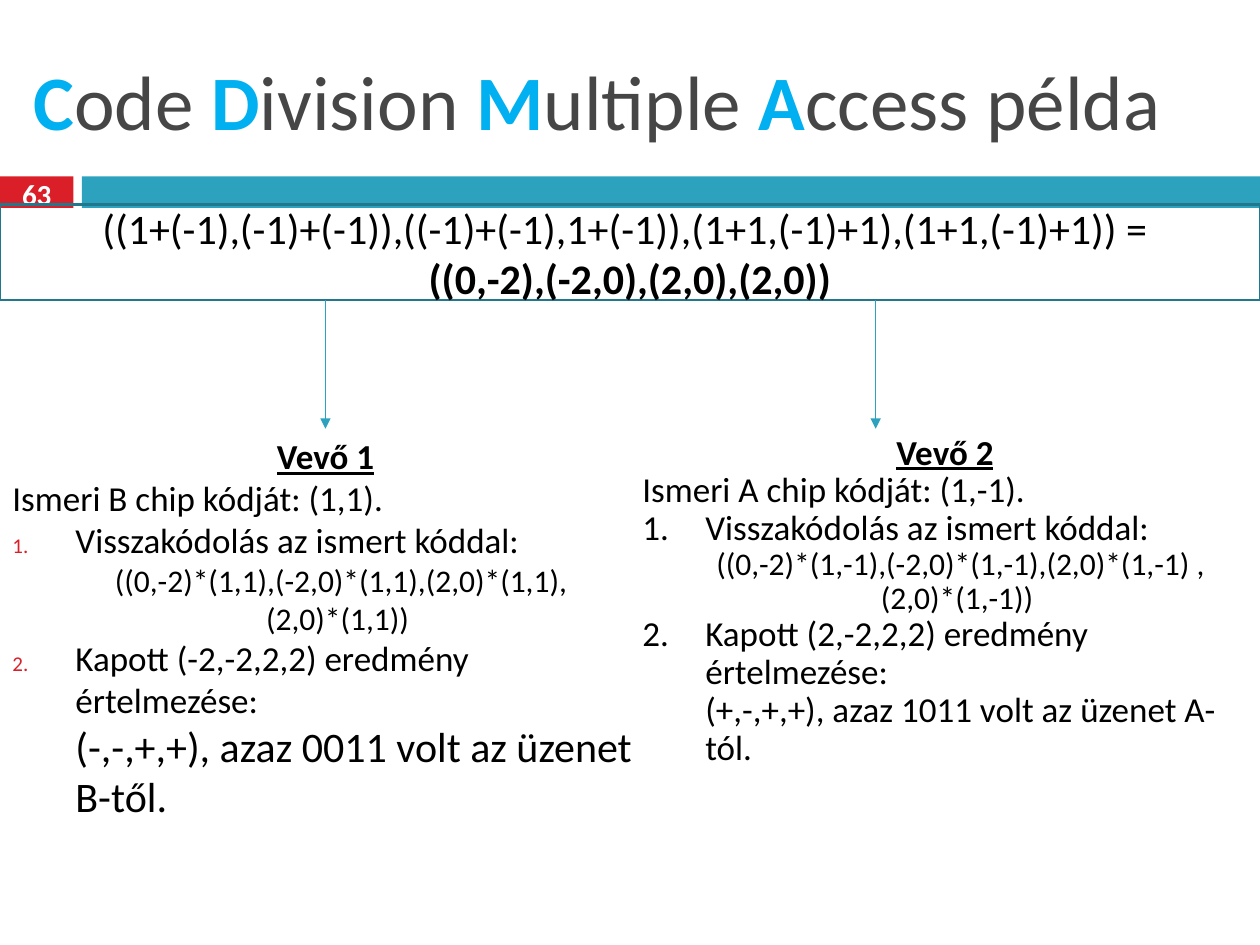
from pptx import Presentation
from pptx.dml.color import RGBColor
from pptx.enum import shapes, text
from pptx.oxml import ns, xmlchemy
from pptx.util import Pt

FONT = "Calibri"
RED = RGBColor(0xDA, 0x1F, 0x28)
TEAL = RGBColor(0x2D, 0xA2, 0xBF)
DEEP = RGBColor(0x21, 0x78, 0x8D)
SKY = RGBColor(0x00, 0xB0, 0xF0)
GRAY = RGBColor(0x46, 0x46, 0x46)
BLACK = RGBColor(0, 0, 0)
WHITE = RGBColor(0xFF, 0xFF, 0xFF)
LEFT, MID = text.PP_ALIGN.LEFT, text.PP_ALIGN.CENTER


def sub(node, tag, **attrs):
    child = xmlchemy.OxmlElement(tag)
    for key, val in attrs.items():
        child.set(key, str(val))
    node.append(child)
    return child


def style(font, size, color, bold=False):
    font.name, font.size, font.bold = FONT, Pt(size), bold
    font.color.rgb = color


def add_rect(slide, box, fill=None, line=None):
    rect = slide.shapes.add_shape(shapes.MSO_SHAPE.RECTANGLE, *map(Pt, box))
    rect.shadow.inherit = False
    if fill is None:
        rect.fill.background()
    else:
        rect.fill.solid()
        rect.fill.fore_color.rgb = fill
    if line is None:
        rect.line.fill.background()
    else:
        rect.line.color.rgb = line
        rect.line.width = Pt(1.5)
    return rect


def add_title(slide, box):
    title = slide.shapes.title
    title.left, title.top, title.width, title.height = map(Pt, box)
    frame = title.text_frame
    frame.vertical_anchor = text.MSO_ANCHOR.MIDDLE
    frame.auto_size = text.MSO_AUTO_SIZE.NONE
    para = frame.paragraphs[0]
    para.alignment = LEFT
    for word in ("Code ", "Division ", "Multiple ", "Access példa"):
        for part, color, bold in ((word[0], SKY, True), (word[1:], GRAY, False)):
            run = para.add_run()
            run.text = part
            style(run.font, 44, color, bold)


def add_bar(slide, box, number):
    left, top, width, height = box
    tab, gap = 42, 4.8
    add_rect(slide, (left, top, tab, height), RED)
    add_rect(slide, (left + tab + gap, top, width - tab - gap, height), TEAL)
    label = slide.shapes.add_textbox(*map(Pt, (left, top - 2.2, tab, 24)))
    frame = label.text_frame
    frame.vertical_anchor = text.MSO_ANCHOR.MIDDLE
    para = frame.paragraphs[0]
    para.text, para.alignment = number, MID
    style(para.font, 16.6, WHITE, True)


def add_sum(slide, box, terms, total):
    frame = add_rect(slide, box, line=DEEP).text_frame
    frame.word_wrap = True
    frame.vertical_anchor = text.MSO_ANCHOR.MIDDLE
    para = frame.paragraphs[0]
    para.alignment = MID
    for part, bold in ((terms, False), (total, True)):
        if bold:
            para.add_line_break()
        run = para.add_run()
        run.text = part
        style(run.font, 24, BLACK, bold)


def add_arrow(slide, x, top, end):
    kind = shapes.MSO_CONNECTOR.STRAIGHT
    arrow = slide.shapes.add_connector(kind, *map(Pt, (x, top, x, end)))
    arrow.line.color.rgb = TEAL
    arrow.line.width = Pt(0.79)
    sub(arrow.line._get_or_add_ln(), "a:tailEnd", type="triangle")
    sub(arrow._element.spPr, "a:effectLst")


def add_steps(slide, box, lines, last=20, space=1.0, mark=None):
    frame = slide.shapes.add_textbox(*map(Pt, box)).text_frame
    frame.word_wrap = True
    forms = (
        (MID, 0, 0, 20, False),
        (LEFT, 0, 0, 20, False),
        (LEFT, 0, 36, 20, True),
        (MID, 1, 18, 18, False),
        (LEFT, 0, 36, 20, True),
        (LEFT, 1, 36, last, False),
    )
    for i, (line, form) in enumerate(zip(lines, forms)):
        align, level, margin, size, listed = form
        para = frame.add_paragraph() if i else frame.paragraphs[0]
        para.text, para.alignment, para.level = line, align, level
        para.line_spacing = space
        style(para.font, size, BLACK, i == 0)
        para.font.underline = i == 0
        props = para._p.get_or_add_pPr()
        props.set("marL", str(Pt(margin)))
        props.set("indent", str(-Pt(margin) if listed else 0))
        if listed:
            bullets = []
            if mark is not None:
                color = xmlchemy.OxmlElement("a:buClr")
                sub(color, "a:srgbClr", val=mark)
                size = xmlchemy.OxmlElement("a:buSzPct")
                size.set("val", "60000")
                bullets += [color, size]
            auto = xmlchemy.OxmlElement("a:buAutoNum")
            auto.set("type", "arabicPeriod")
            at = props.index(props.find(ns.qn("a:defRPr")))
            for j, node in enumerate(bullets + [auto]):
                props.insert(at + j, node)


def main():
    deck = Presentation()
    deck.slide_width, deck.slide_height = Pt(720), Pt(540)
    slide = deck.slides.add_slide(deck.slide_layouts[5])
    add_title(slide, (12, 18, 696, 78))
    add_bar(slide, (0, 100.8, 720, 18), "63")
    add_steps(slide, (0, 245, 372, 277), (
        "Vevő 1",
        "Ismeri B chip kódját: (1,1).",
        "Visszakódolás az ismert kóddal:",
        "((0,-2)*(1,1),(-2,0)*(1,1),(2,0)*(1,1),(2,0)*(1,1)) ",
        "Kapott (-2,-2,2,2) eredmény értelmezése:",
        "(-,-,+,+), azaz 0011 volt az üzenet B-től.",
    ), last=24, mark=RED)
    add_steps(slide, (360, 245, 360, 277), (
        "Vevő 2",
        "Ismeri A chip kódját: (1,-1).",
        "Visszakódolás az ismert kóddal:",
        "((0,-2)*(1,-1),(-2,0)*(1,-1),(2,0)*(1,-1) ,(2,0)*(1,-1)) ",
        "Kapott (2,-2,2,2) eredmény értelmezése:",
        "(+,-,+,+), azaz 1011 volt az üzenet A-tól.",
    ), space=0.9)
    add_sum(slide, (0, 117, 720, 54.4),
            "((1+(-1),(-1)+(-1)),((-1)+(-1),1+(-1)),(1+1,(-1)+1),(1+1,(-1)+1)) = ",
            "((0,-2),(-2,0),(2,0),(2,0))")
    for x in (186, 500.4):
        add_arrow(slide, x, 171.4, 245)
    deck.save("out.pptx")


if __name__ == "__main__":
    main()
